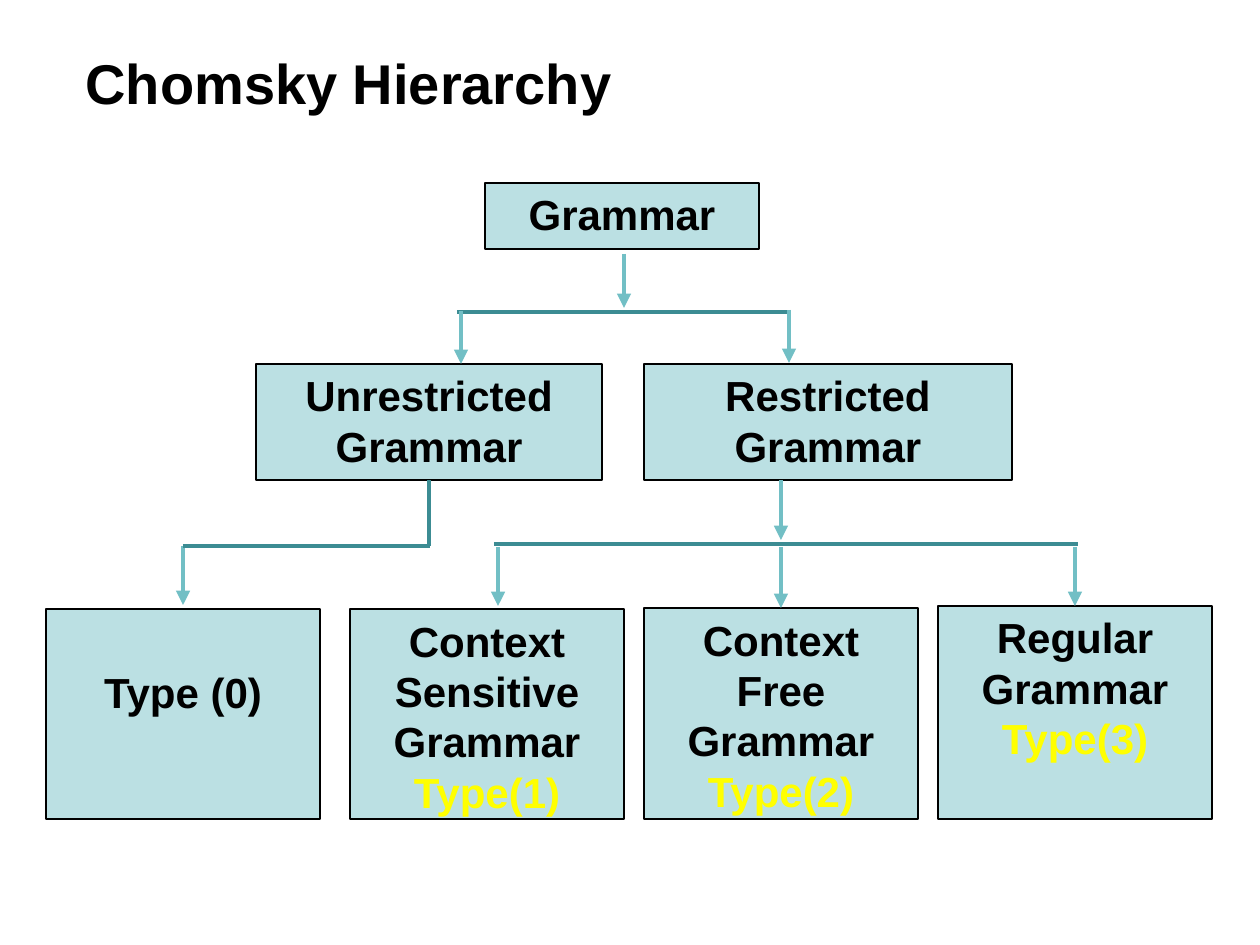
from lxml.etree import SubElement
from pptx import Presentation
from pptx.dml.color import RGBColor
from pptx.enum.shapes import MSO_CONNECTOR, MSO_SHAPE
from pptx.enum.text import MSO_ANCHOR, MSO_AUTO_SIZE, PP_ALIGN
from pptx.oxml.ns import qn
from pptx.util import Emu, Pt

PX = 914400 / 126
BLACK, YELLOW, FILL = "000000", "FFFF00", "BBE0E3"
ARROW, BAR = "72BFC5", "3C8C93"


def px(*nums):
    return [Emu(round(n * PX)) for n in nums]


def color(code):
    return RGBColor.from_string(code)


deck = Presentation()
deck.slide_width, deck.slide_height = px(1260, 945)
slide = deck.slides.add_slide(deck.slide_layouts[6])

# Title
title = slide.shapes.add_textbox(*px(73, 42, 1113, 81))
frame = title.text_frame
frame.word_wrap = True
frame.auto_size = MSO_AUTO_SIZE.SHAPE_TO_FIT_TEXT
run = frame.paragraphs[0].add_run()
run.text = "Chomsky Hierarchy"
run.font.name, run.font.size, run.font.bold = "Arial", Pt(32), True
run.font.color.rgb = color(BLACK)

# Boxes: name, type, left, top, width, height, top inset
nodes = [
    ("Grammar", "", 485, 183, 274, 66, 6),
    ("Unrestricted Grammar", "", 256, 364, 346, 116, 6),
    ("Restricted Grammar", "", 644, 364, 368, 116, 6),
    ("Type (0)", "", 46, 609, 274, 210, 57),
    ("Context Sensitive Grammar", "Type(1)", 350, 609, 274, 210, 6),
    ("Context Free Grammar", "Type(2)", 644, 608, 274, 211, 6),
    ("Regular Grammar", "Type(3)", 938, 606, 274, 213, 6),
]
boxes = {}
for name, kind, left, top, width, height, inset in nodes:
    box = slide.shapes.add_shape(MSO_SHAPE.RECTANGLE, *px(left, top, width, height))
    boxes[name] = box
    box.shadow.inherit = False
    box.fill.solid()
    box.fill.fore_color.rgb = color(FILL)
    box.line.color.rgb = color(BLACK)
    box.line.width = Pt(0.75)
    frame = box.text_frame
    frame.word_wrap = True
    frame.vertical_anchor = MSO_ANCHOR.TOP
    frame.margin_top = px(inset)[0]
    para = frame.paragraphs[0]
    for text, ink in ((name, BLACK), (kind, YELLOW)):
        if not text:
            continue
        if ink == YELLOW:
            para = frame.add_paragraph()
        para.alignment = PP_ALIGN.CENTER
        run = para.add_run()
        run.text = text
        run.font.name, run.font.size, run.font.bold = "Arial", Pt(24), True
        run.font.color.rgb = color(ink)

# Lines: start x, y, end x, y, color, box joined at start, box joined at end
links = [
    (1075, 547, 1075, 606, ARROW, None, "Regular Grammar"),
    (781, 547, 781, 608, ARROW, None, "Context Free Grammar"),
    (498, 547, 498, 606, ARROW, None, None),
    (494, 544, 1078, 544, BAR, None, None),
    (781, 480, 781, 540, ARROW, None, None),
    (457, 312, 787, 312, BAR, None, None),
    (789, 310, 789, 363, ARROW, None, None),
    (461, 311, 461, 364, ARROW, None, None),
    (624, 254, 624, 308, ARROW, None, None),
    (183, 546, 183, 605, ARROW, None, None),
    (183, 546, 430, 546, BAR, None, None),
    (429, 480, 429, 546, BAR, "Unrestricted Grammar", None),
]
for x1, y1, x2, y2, ink, start, end in links:
    link = slide.shapes.add_connector(MSO_CONNECTOR.STRAIGHT, *px(x1, y1, x2, y2))
    link.line.color.rgb = color(ink)
    link.line.width = Pt(2.75)
    if ink == ARROW:
        SubElement(link.line._get_or_add_ln(), qn("a:tailEnd"), type="triangle")
    SubElement(link._element.spPr, qn("a:effectLst"))
    if start:
        link.begin_connect(boxes[start], 2)
    if end:
        link.end_connect(boxes[end], 0)

deck.save("out.pptx")
